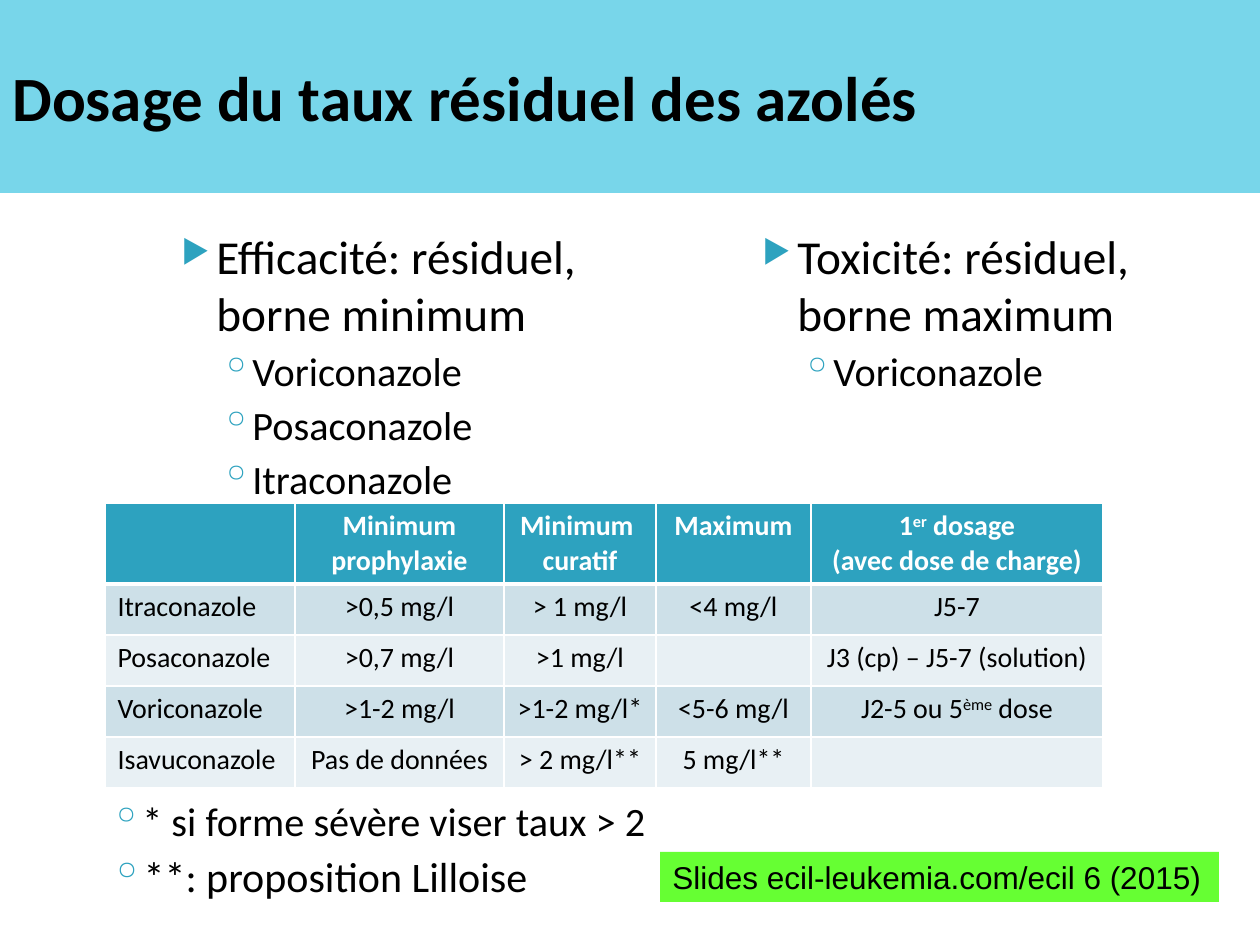
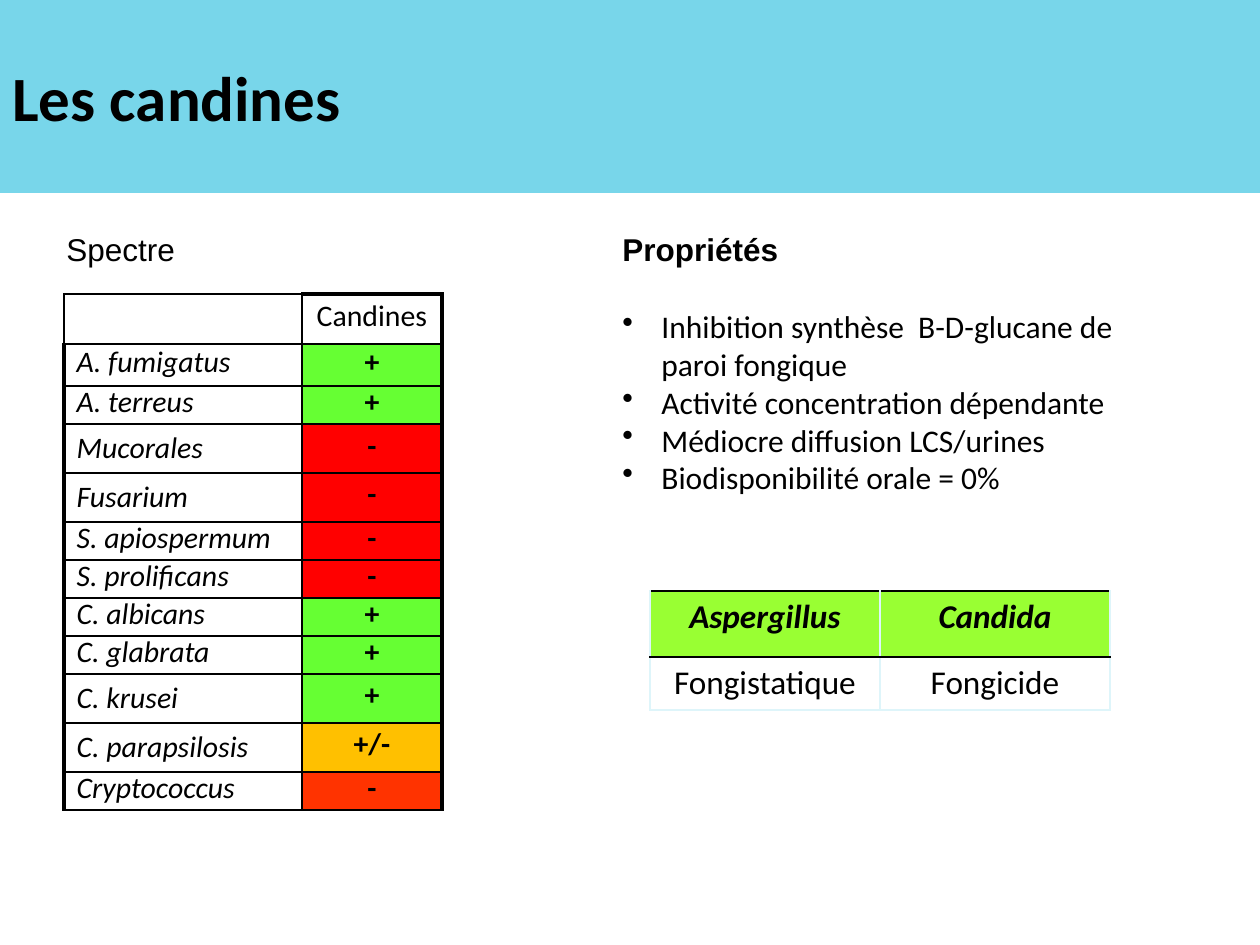
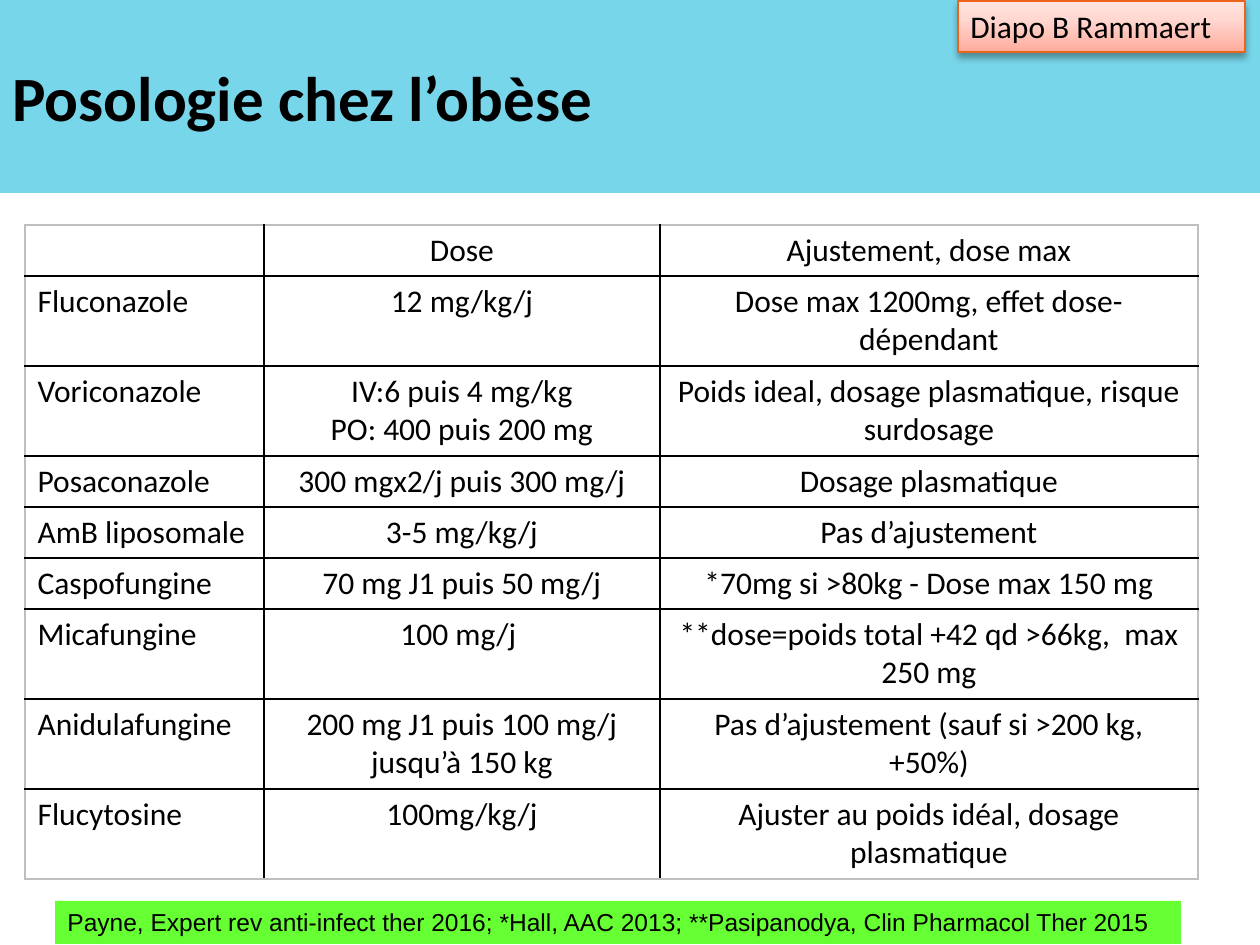
from copy import deepcopy

from lxml import etree
from pptx import Presentation
from pptx.dml.color import RGBColor
from pptx.enum.shapes import MSO_SHAPE
from pptx.enum.text import MSO_ANCHOR, PP_ALIGN
from pptx.oxml.ns import qn
from pptx.util import Emu, Pt

PX = 914400 / 126
RECT = MSO_SHAPE.RECTANGLE
LEFT, CENTER = PP_ALIGN.LEFT, PP_ALIGN.CENTER
TOP, MIDDLE = MSO_ANCHOR.TOP, MSO_ANCHOR.MIDDLE

COLORS = {
    "band": "78D6EA", "accent": "2DA2BF", "text": "000000", "white": "FFFFFF",
    "row_dark": "CDE0E8", "row_light": "E8F0F4", "pale": "DEF5FA",
    "edge": "BFBFBF", "green": "66FF33", "lime": "99FF33", "red": "FF0000",
    "amber": "FFC000", "vermilion": "FF3300", "tag_line": "EB641B",
    "tag_low": "FFAC9C", "tag_mid": "FFD8D2", "tag_high": "FFE4DF",
}
# Bullet levels: character, left margin px, hanging px, size %, space before pt
ARROW = ("▶", 50, 35, 68, 4)
RING = ("◦", 86, 32, 100, 3.2)
DOT = ("•", 39, 39, 100, 0)


def px(n):
    return Emu(round(n * PX))


def rgb(name):
    return RGBColor.from_string(COLORS[name])


def sub(parent, tag, **attrs):
    return etree.SubElement(parent, qn(tag), {k: str(v) for k, v in attrs.items()})


def set_font(p, size, name="Calibri", color="text", bold=False, italic=False):
    f = p.font
    f.size, f.name, f.bold, f.italic = Pt(size), name, bold, italic
    f.color.rgb = rgb(color)


def write(p, text):
    """Fill a paragraph; parts between ^ marks are superscript."""
    for i, part in enumerate(text.split("^")):
        r = p.add_run()
        r.text = part
        if i % 2:
            r._r.get_or_add_rPr().set("baseline", "30000")


def set_bullet(p, level, color):
    char, margin, hang, size, before = level
    pPr = p._p.get_or_add_pPr()
    pPr.set("marL", str(px(margin)))
    pPr.set("indent", str(-px(hang)))
    p.space_before = Pt(before)
    fill = etree.Element(qn("a:buClr"))
    sub(fill, "a:srgbClr", val=COLORS[color])
    scale = etree.Element(qn("a:buSzPct"), val=str(size * 1000))
    mark = etree.Element(qn("a:buChar"), char=char)
    # Bullet properties precede the default run properties
    at = pPr.find(qn("a:defRPr"))
    for el in (fill, scale, mark):
        at.addprevious(el)


def add_label(s, x, y, w, h, text, size, font="Arial", fill=None, bold=False):
    sp = s.shapes.add_textbox(px(x), px(y), px(w), px(h))
    if fill:
        sp.fill.solid()
        sp.fill.fore_color.rgb = rgb(fill)
    sp.text_frame.word_wrap = True
    p = sp.text_frame.paragraphs[0]
    write(p, text)
    set_font(p, size, font, bold=bold)
    return sp


def add_bullets(s, x, y, w, h, items, color="accent"):
    """items: (text, size, bullet level)."""
    tf = s.shapes.add_textbox(px(x), px(y), px(w), px(h)).text_frame
    tf.word_wrap = True
    for i, (text, size, level) in enumerate(items):
        p = tf.add_paragraph() if i else tf.paragraphs[0]
        write(p, text)
        set_font(p, size)
        set_bullet(p, level, color)


def set_borders(cell, borders):
    """borders: (colour, points) for left, right, top and bottom."""
    tcPr = cell._tc.get_or_add_tcPr()
    for i, (side, (color, width)) in enumerate(zip("LRTB", borders)):
        ln = etree.Element(qn(f"a:ln{side}"), w=str(Pt(width)))
        sub(sub(ln, "a:solidFill"), "a:srgbClr", val=COLORS[color])
        tcPr.insert(i, ln)


def add_grid(s, x, y, cols, rows, texts, size, look):
    """look(row, column) gives fill, borders and text style of a cell."""
    frame = s.shapes.add_table(len(rows), len(cols), px(x), px(y),
                               px(sum(cols)), px(sum(rows)))
    table = frame.table
    table.first_row = table.horz_banding = False
    for col, w in zip(table.columns, cols):
        col.width = px(w)
    for row, h in zip(table.rows, rows):
        row.height = px(h)
    for i, line in enumerate(texts):
        for j, text in enumerate(line):
            cell, style = table.cell(i, j), look(i, j)
            if style.get("fill"):
                cell.fill.solid()
                cell.fill.fore_color.rgb = rgb(style["fill"])
            else:
                cell.fill.background()
            set_borders(cell, style["borders"])
            cell.vertical_anchor = style.get("anchor", TOP)
            for k, part in enumerate(text.split("\n")):
                tf = cell.text_frame
                p = tf.add_paragraph() if k else tf.paragraphs[0]
                if part:
                    write(p, part)
                p.alignment = style.get("align", CENTER if j else LEFT)
                p.line_spacing = style.get("spacing", 1.0)
                set_font(p, size, color=style.get("color", "text"),
                         bold=style.get("bold", False), italic=style.get("italic", False))


def add_titled_slide(prs, title):
    s = prs.slides.add_slide(prs.slide_layouts[6])
    sp = s.shapes.add_shape(RECT, 0, 0, px(1260), px(193))
    sp.shadow.inherit = False
    sp.fill.solid()
    sp.fill.fore_color.rgb = rgb("band")
    sp.line.fill.background()
    tf = sp.text_frame
    tf.word_wrap, tf.vertical_anchor = True, MIDDLE
    p = tf.paragraphs[0]
    write(p, title)
    p.alignment = LEFT
    set_font(p, 36, bold=True)
    return s


# Slide 1: residual levels of azoles
LEVELS = [
    ("", "Minimum\nprophylaxie", "Minimum \ncuratif", "Maximum",
     "1^er^ dosage\n(avec dose de charge)"),
    ("Itraconazole", ">0,5 mg/l", "> 1 mg/l", "<4 mg/l", "J5-7"),
    ("Posaconazole", ">0,7 mg/l", ">1 mg/l", "", "J3 (cp) – J5-7 (solution)"),
    ("Voriconazole", ">1-2 mg/l", ">1-2 mg/l*", "<5-6 mg/l", "J2-5 ou 5^ème^ dose"),
    ("Isavuconazole", "Pas de données", "> 2 mg/l**", "5 mg/l**", ""),
]


def level_look(i, j):
    thin, thick = ("white", 1), ("white", 3)
    if i == 0:
        return {"fill": "accent", "color": "white", "bold": True,
                "borders": (thin, thin, thin, thick)}
    return {"fill": "row_dark" if i % 2 else "row_light",
            "borders": (thin, thin, thick if i == 1 else thin, thin)}


def build_levels(prs):
    s = add_titled_slide(prs, "Dosage du taux résiduel des azolés")
    columns = [
        (154, "Efficacité: résiduel, borne minimum",
         ("Voriconazole", "Posaconazole", "Itraconazole")),
        (735, "Toxicité: résiduel, borne maximum", ("Voriconazole",)),
    ]
    for x, head, drugs in columns:
        add_bullets(s, x, 221, 525, 567,
                    [(head, 27, ARROW)] + [(drug, 23, RING) for drug in drugs])
    add_label(s, 660, 852, 559, 50, "Slides ecil-leukemia.com/ecil 6 (2015)", 18,
              fill="green")
    add_grid(s, 105, 503, (190, 209, 152, 155, 292), [81] + [51] * 4, LEVELS, 16,
             level_look)
    add_bullets(s, 44, 790, 655, 117, [("* si forme sévère viser taux > 2", 23, RING),
                                       ("**: proposition Lilloise", 24, RING)])


# Slide 2: spectrum and properties of candins
# species, result, result colour, row height
SPECTRUM = [
    ("A. fumigatus", "+", "green", 42), ("A. terreus", "+", "green", 38),
    ("Mucorales", "-", "red", 49), ("Fusarium", "-", "red", 49),
    ("S. apiospermum", "-", "red", 38), ("S. prolificans", "-", "red", 38),
    ("C. albicans", "+", "green", 38), ("C. glabrata", "+", "green", 38),
    ("C. krusei", "+", "green", 49), ("C. parapsilosis", "+/-", "amber", 49),
    ("Cryptococcus", "-", "vermilion", 38),
]


def spectrum_look(i, j):
    thin, thick = ("text", 1), ("text", 2.25)
    look = {"anchor": MIDDLE, "spacing": 0.7}
    if j:
        look["borders"] = (thin, thick, thin if i else thick, thin)
        if i:
            look.update(fill=SPECTRUM[i - 1][2], bold=True)
    else:
        look["borders"] = (thick if i else thin, thin, thin, thin)
        look["italic"] = True
        if i and SPECTRUM[i - 1][3] == 49:
            look["spacing"] = 1.0
    return look


def action_look(i, j):
    pale, black = ("pale", 1), ("text", 1)
    if i == 0:
        return {"fill": "lime", "bold": True, "italic": True, "align": CENTER,
                "borders": (pale, pale, black, black)}
    return {"align": CENTER, "borders": (pale, pale, black, pale)}


def build_candins(prs):
    s = add_titled_slide(prs, "Les candines")
    add_grid(s, 64, 294, (238, 140), [50] + [row[3] for row in SPECTRUM],
             [("", "Candines")] + [row[:2] for row in SPECTRUM], 17, spectrum_look)
    add_label(s, 54, 224, 387, 50, "Spectre", 18)
    add_label(s, 610, 224, 576, 50, "Propriétés", 18, bold=True)
    properties = ("Inhibition synthèse  B-D-glucane de paroi fongique",
                  "Activité concentration dépendante",
                  "Médiocre diffusion LCS/urines", "Biodisponibilité orale = 0%")
    add_bullets(s, 610, 301, 576, 205, [(text, 18, DOT) for text in properties], "text")
    add_grid(s, 650, 591, (230, 230), (66, 53),
             [("Aspergillus", "Candida"), ("Fongistatique", "Fongicide")], 19,
             action_look)


# Slide 3: dosing in obese patients
DOSES = [
    ("", "Dose", "Ajustement, dose max"),
    ("Fluconazole", "12 mg/kg/j", "Dose max 1200mg, effet dose-dépendant"),
    ("Voriconazole", "IV:6 puis 4 mg/kg\nPO: 400 puis 200 mg",
     "Poids ideal, dosage plasmatique, risque surdosage"),
    ("Posaconazole", "300 mgx2/j puis 300 mg/j", "Dosage plasmatique"),
    ("AmB liposomale", "3-5 mg/kg/j", "Pas d’ajustement"),
    ("Caspofungine", "70 mg J1 puis 50 mg/j", "*70mg si >80kg - Dose max 150 mg"),
    ("Micafungine", "100 mg/j ", "**dose=poids total +42 qd >66kg,  max 250 mg"),
    ("Anidulafungine", "200 mg J1 puis 100 mg/j jusqu’à 150 kg",
     "Pas d’ajustement (sauf si >200 kg, +50%)"),
    ("Flucytosine", "100mg/kg/j", "Ajuster au poids idéal, dosage plasmatique"),
]


def dose_look(i, j):
    outer = (j == 0, j == 2, i == 0, i == len(DOSES) - 1)
    return {"borders": [("edge" if side else "text", 1) for side in outer]}


def add_author_tag(s, x, y, w, h, text):
    sp = add_label(s, x, y, w, h, text, 18, "Calibri")
    sp.line.color.rgb = rgb("tag_line")
    sp.line.width = Pt(0.75)
    # Three-stop gradient, rising from the bottom
    sp.fill.gradient()
    sp.fill.gradient_angle = 90
    first = sp._element.spPr.find(".//" + qn("a:gs"))
    first.addnext(deepcopy(first))
    stops = zip(sp.fill.gradient_stops, (0, 0.65, 1), ("tag_low", "tag_mid", "tag_high"))
    for stop, position, color in stops:
        stop.position = position
        stop.color.rgb = rgb(color)
    # Soft shadow below
    sp.shadow.inherit = False
    effects = sp._element.spPr.find(qn("a:effectLst"))
    shadow = sub(effects, "a:outerShdw", blurRad=Pt(4), dist=Pt(3), dir=5400000,
                 rotWithShape=0)
    sub(sub(shadow, "a:srgbClr", val=COLORS["text"]), "a:alpha", val=35000)


def build_doses(prs):
    s = add_titled_slide(prs, "Posologie chez l’obèse")
    add_grid(s, 25, 225, (239, 396, 538), (51, 90, 90, 51, 51, 51, 90, 90, 90), DOSES,
             18, dose_look)
    add_label(s, 55, 901, 1126, 43, "Payne, Expert rev anti-infect ther 2016; "
              "*Hall, AAC 2013; **Pasipanodya, Clin Pharmacol Ther 2015", 14, fill="green")
    add_author_tag(s, 958, 1, 287, 51, "Diapo B Rammaert")


def main():
    prs = Presentation()
    prs.slide_width, prs.slide_height = px(1260), px(945)
    build_levels(prs)
    build_candins(prs)
    build_doses(prs)
    prs.save("out.pptx")


if __name__ == "__main__":
    main()
